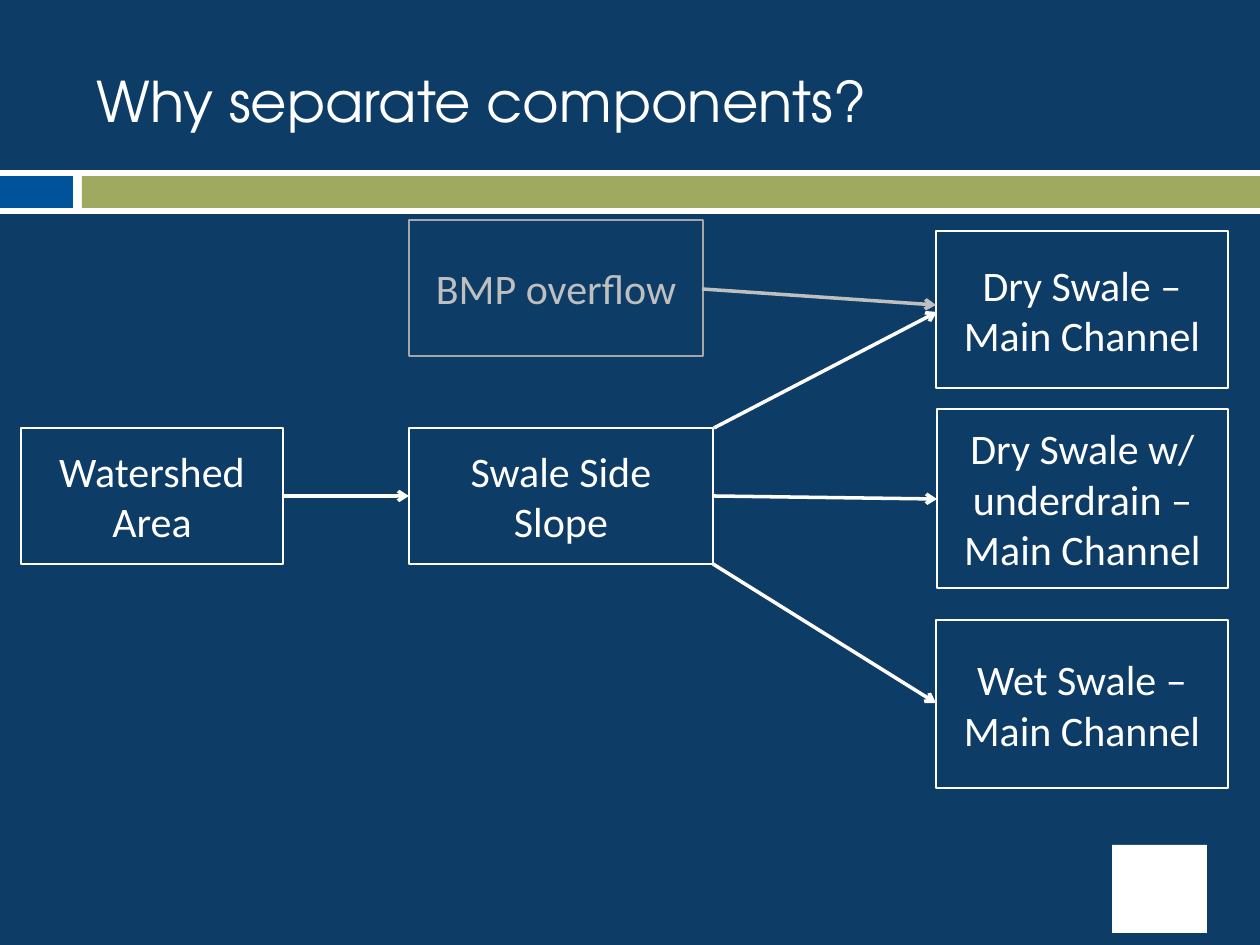
from dataclasses import dataclass

from lxml import etree
from pptx import Presentation
from pptx import util as u
from pptx.dml.color import RGBColor
from pptx.enum import shapes, text
from pptx.oxml import ns

PX = 914400 / 126


@dataclass(frozen=True)
class Theme:
    background: str = "0D3C67"
    white: str = "FFFFFF"
    blue: str = "00529B"
    green: str = "7F8E2B"
    muted_line: str = "A6A6A6"
    muted_text: str = "BFBFBF"
    title_font: str = "TeX Gyre Adventor"
    body_font: str = "Calibri"
    title_size: int = 32
    body_size: int = 24
    box_width: float = 1.5
    arrow_width: float = 2


def lengths(*values):
    return [u.Emu(round(value * PX)) for value in values]


def apply(target, formats):
    for name, value in formats.items():
        setattr(target, name, value)


class SlideBuilder:
    def __init__(self, presentation, theme):
        self.theme = theme
        self.slide = presentation.slides.add_slide(presentation.slide_layouts[5])
        fill = self.slide.background.fill
        fill.solid()
        fill.fore_color.rgb = RGBColor.from_string(theme.background)

    def set_text(self, shape, words, font, size, color, align):
        frame = shape.text_frame
        frame.text = words
        apply(frame, {
            "word_wrap": True,
            "auto_size": text.MSO_AUTO_SIZE.NONE,
            "vertical_anchor": text.MSO_ANCHOR.MIDDLE,
        })
        paragraph = frame.paragraphs[0]
        paragraph.alignment = align
        apply(paragraph.font, {"name": font, "size": u.Pt(size)})
        paragraph.font.color.rgb = RGBColor.from_string(color)

    def title(self, words, place):
        shape = self.slide.shapes.title
        apply(shape, dict(zip(("left", "top", "width", "height"), lengths(*place))))
        self.set_text(shape, words, self.theme.title_font, self.theme.title_size,
                      self.theme.white, text.PP_ALIGN.LEFT)

    def rectangle(self, place):
        shape = self.slide.shapes.add_shape(shapes.MSO_SHAPE.RECTANGLE, *lengths(*place))
        shape.shadow.inherit = False
        return shape

    def block(self, place, color, opacity=100):
        shape = self.rectangle(place)
        shape.line.fill.background()
        shape.fill.solid()
        shape.fill.fore_color.rgb = RGBColor.from_string(color)
        if opacity < 100:
            color_element = shape._element.spPr.find(".//" + ns.qn("a:srgbClr"))
            etree.SubElement(color_element, ns.qn("a:alpha"), val=str(opacity * 1000))

    def box(self, words, place, line_color, text_color):
        shape = self.rectangle(place)
        shape.fill.background()
        shape.line.color.rgb = RGBColor.from_string(line_color)
        shape.line.width = u.Pt(self.theme.box_width)
        self.set_text(shape, words, self.theme.body_font, self.theme.body_size,
                      text_color, text.PP_ALIGN.CENTER)

    def arrow(self, start, end, color):
        connector = self.slide.shapes.add_connector(
            shapes.MSO_CONNECTOR.STRAIGHT, *lengths(*start, *end))
        connector.line.color.rgb = RGBColor.from_string(color)
        connector.line.width = u.Pt(self.theme.arrow_width)
        properties = connector._element.spPr
        etree.SubElement(properties.find(ns.qn("a:ln")), ns.qn("a:tailEnd"), type="arrow")
        etree.SubElement(properties, ns.qn("a:effectLst"))


def main():
    theme = Theme()
    presentation = Presentation()
    presentation.slide_width, presentation.slide_height = lengths(1260, 945)
    builder = SlideBuilder(presentation, theme)

    for place, color, opacity in (
        ((0, 170, 1260, 44), theme.white, 100),
        ((0, 176, 73, 32), theme.blue, 100),
        ((82, 176, 1178, 32), theme.green, 75),
        ((1112, 845, 95, 88), theme.white, 100),
    ):
        builder.block(place, color, opacity)

    builder.title("Why separate components?", (84, 32, 1124, 136))

    for words, place in (
        ("Watershed Area", (21, 428, 262, 136)),
        ("Swale Side Slope", (409, 428, 304, 136)),
        ("Dry Swale – Main Channel", (936, 231, 292, 157)),
        ("Dry Swale w/ underdrain – Main Channel", (937, 409, 291, 179)),
        ("Wet Swale – Main Channel", (936, 620, 292, 168)),
    ):
        builder.box(words, place, theme.white, theme.white)
    builder.box("BMP overflow", (409, 220, 294, 136), theme.muted_line, theme.muted_text)

    for start, end in (
        ((283, 496), (409, 496)),
        ((714, 428), (937, 312)),
        ((713, 496), (937, 499)),
        ((713, 564), (936, 703)),
    ):
        builder.arrow(start, end, theme.white)
    builder.arrow((702, 289), (936, 305), theme.muted_text)

    presentation.save("out.pptx")


if __name__ == "__main__":
    main()
